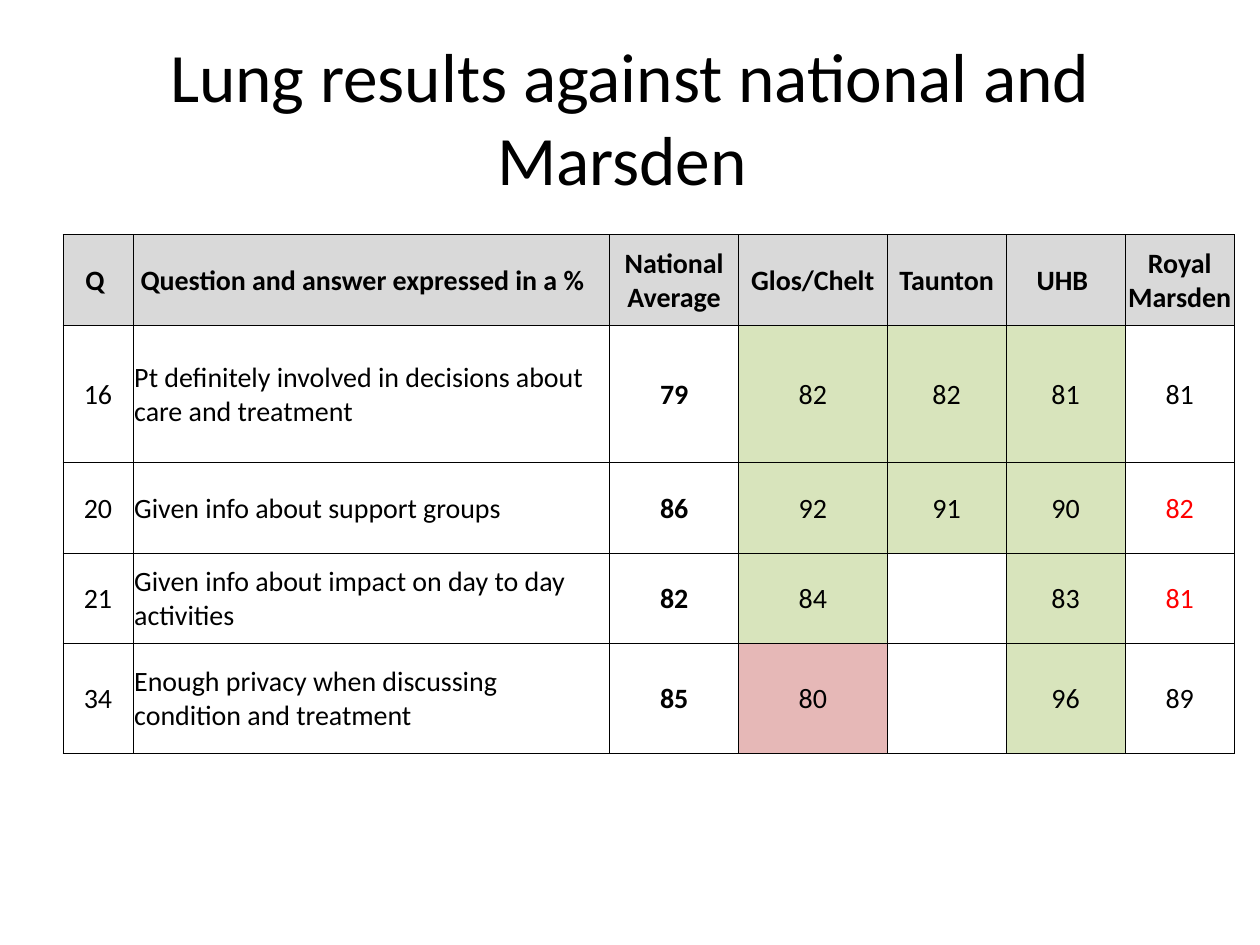
"""Build the slide comparing lung survey results with the national average."""
from dataclasses import dataclass

import pptx
import pptx.dml.color
import pptx.enum.text
import pptx.oxml
import pptx.oxml.ns
import pptx.util

Pt = pptx.util.Pt
Align = pptx.enum.text.PP_ALIGN
Anchor = pptx.enum.text.MSO_ANCHOR


@dataclass(frozen=True)
class Theme:
    """Colours and type sizes of the slide."""
    font: str = "Calibri"
    title_size: float = 39.6
    table_size: float = 16
    border_width: float = 0.5
    ink: str = "000000"
    warning: str = "FF0000"
    header: str = "D9D9D9"
    above: str = "D8E4BC"
    below: str = "E6B8B7"


THEME = Theme()
QUESTION, NATIONAL, MARSDEN = 1, 2, 6
HEADINGS = ["Q ", " Question and answer expressed in a %", "National Average",
            "Glos/Chelt", "Taunton", "UHB ", "Royal Marsden"]
RESULTS = [
    [16, "Pt definitely involved in decisions about care and treatment", 79, 82, 82, 81, 81],
    [20, "Given info about support groups", 86, 92, 91, 90, 82],
    [21, "Given info about impact on day to day activities", 82, 84, None, 83, 81],
    [34, "Enough privacy when discussing condition and treatment", 85, 80, None, 96, 89],
]
COLUMN_WIDTHS = [40, 272.5, 73.5, 85, 68, 68, 62.5]
ROW_HEIGHTS = [52, 78.5, 51.5, 52, 62.5]


def style_paragraph(paragraph, size, align, bold=False, color=THEME.ink):
    """Align a paragraph and format its runs."""
    paragraph.alignment = align
    for span in paragraph.runs:
        span.font.name = THEME.font
        span.font.size = Pt(size)
        span.font.bold = bold
        span.font.color.rgb = pptx.dml.color.RGBColor.from_string(color)


def add_title(page, text):
    """Add the centred slide title."""
    box = page.shapes.add_textbox(Pt(36), Pt(21.6), Pt(648), Pt(90))
    frame = box.text_frame
    frame.word_wrap = True
    frame.vertical_anchor = Anchor.MIDDLE
    frame.text = text
    style_paragraph(frame.paragraphs[0], THEME.title_size, Align.CENTER)


def add_borders(cell):
    """Draw a thin line on all four sides of a cell."""
    properties = cell._tc.get_or_add_tcPr()
    for side in ("lnL", "lnR", "lnT", "lnB"):
        properties.append(pptx.oxml.parse_xml(
            f'<a:{side} {pptx.oxml.ns.nsdecls("a")} w="{Pt(THEME.border_width)}">'
            f'<a:solidFill><a:srgbClr val="{THEME.ink}"/></a:solidFill></a:{side}>'))


def fill_cell(cell, text, fill=None, **style):
    """Set the text, margins, borders and fill of a cell."""
    cell.margin_left = cell.margin_right = cell.margin_top = Pt(0.72)
    cell.margin_bottom = 0
    cell.vertical_anchor = Anchor.MIDDLE
    cell.text_frame.text = text
    style_paragraph(cell.text_frame.paragraphs[0], THEME.table_size, **style)
    add_borders(cell)
    if fill:
        cell.fill.solid()
        cell.fill.fore_color.rgb = pptx.dml.color.RGBColor.from_string(fill)
    else:
        cell.fill.background()


def rate(column, value, national):
    """Return the fill and text colour of a result against the average."""
    if value is None or column <= NATIONAL:
        return None, THEME.ink
    if column == MARSDEN:
        return None, THEME.warning if value < national else THEME.ink
    return THEME.above if value > national else THEME.below, THEME.ink


def add_results_table(page):
    """Add the table of results with its heading row."""
    table = page.shapes.add_table(
        len(ROW_HEIGHTS), len(COLUMN_WIDTHS), Pt(36), Pt(134),
        Pt(sum(COLUMN_WIDTHS)), Pt(sum(ROW_HEIGHTS))).table
    table.first_row = table.horz_banding = False
    for column, width in zip(table.columns, COLUMN_WIDTHS):
        column.width = Pt(width)
    for row, height in zip(table.rows, ROW_HEIGHTS):
        row.height = Pt(height)
    for row, values in enumerate([HEADINGS] + RESULTS):
        for column, value in enumerate(values):
            heading = row == 0
            fill, color = ((THEME.header, THEME.ink) if heading
                           else rate(column, value, values[NATIONAL]))
            fill_cell(table.cell(row, column), "" if value is None else str(value), fill,
                      align=Align.LEFT if column == QUESTION else Align.CENTER,
                      bold=heading or column == NATIONAL, color=color)


def main():
    """Build and save the deck."""
    deck = pptx.Presentation()
    deck.slide_width, deck.slide_height = Pt(720), Pt(540)
    page = deck.slides.add_slide(deck.slide_layouts[6])
    add_title(page, "Lung results against national and Marsden ")
    add_results_table(page)
    deck.save("out.pptx")


if __name__ == "__main__":
    main()
